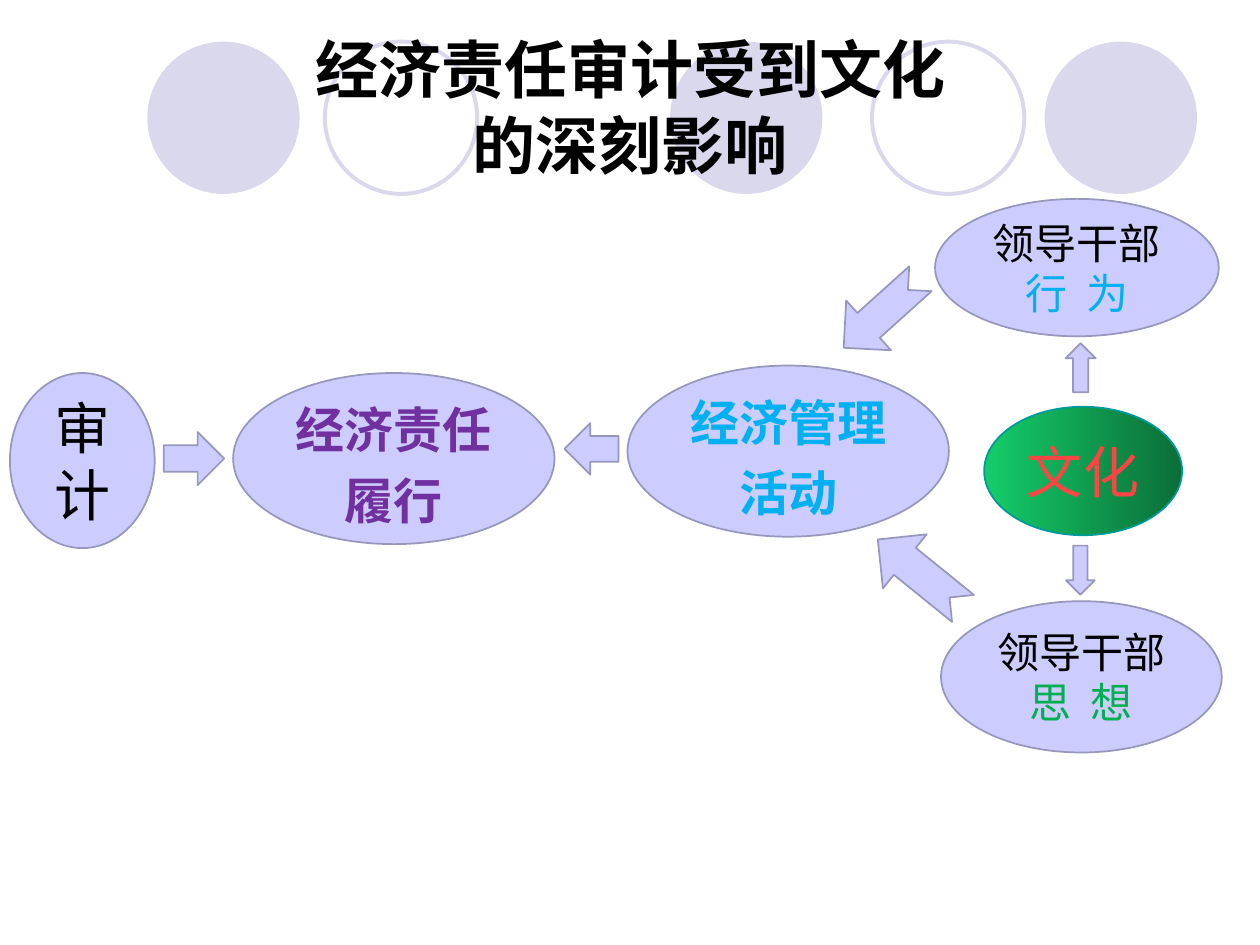
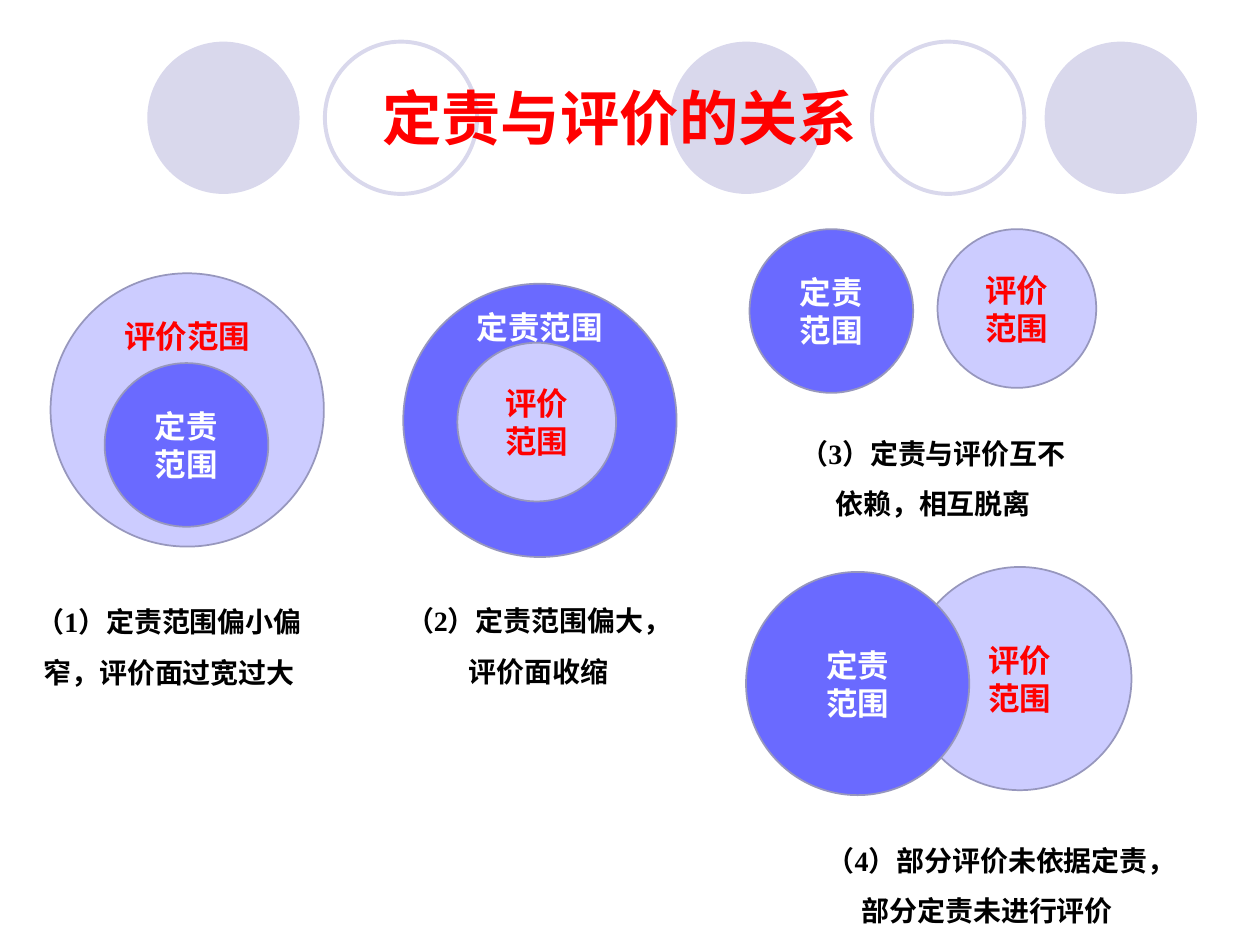
from lxml.etree import SubElement
from pptx import Presentation
from pptx.dml.color import RGBColor
from pptx.enum.shapes import MSO_SHAPE
from pptx.enum.text import MSO_ANCHOR, MSO_AUTO_SIZE, PP_ALIGN
from pptx.oxml.ns import qn
from pptx.util import Cm, Pt

BLACK = RGBColor(0x00, 0x00, 0x00)
WHITE = RGBColor(0xFF, 0xFF, 0xFF)
RED = RGBColor(0xFF, 0x00, 0x00)
CORAL = RGBColor(0xFE, 0x44, 0x44)
SKY = RGBColor(0x00, 0xB0, 0xF0)
GREEN = RGBColor(0x00, 0xB0, 0x50)
PURPLE = RGBColor(0x70, 0x30, 0xA0)
LILAC = RGBColor(0xCC, 0xCC, 0xFF)
INDIGO = RGBColor(0x6A, 0x6A, 0xFF)
OUTLINE = RGBColor(0x97, 0x97, 0xBD)
BAND = RGBColor(0xD9, 0xD8, 0xEC)
TEAL = RGBColor(0x00, 0x99, 0x99)
CULTURE_GRADIENT = (RGBColor(0x14, 0xCD, 0x68), RGBColor(0x0B, 0x6E, 0x38))

CHINESE = "Noto Sans CJK SC"
DIAGRAM = "Noto Sans CJK JP"
SERIF = "Times New Roman"
SANS = "Arial"

# Decorative band: left edge, filled or ring
BAND_TOP, BAND_SIZE = 0.84, 3.07
BAND_CIRCLES = [(2.97, True), (6.55, False), (13.51, True), (17.58, False), (21.06, True)]

# Titles: lines, box, size, font, colour, line spacing
INFLUENCE_TITLE = (["经济责任审计受到文化", "的深刻影响"], (1.4, 1.24, 22.6, 1.8), 36, SERIF, BLACK, 1.0)
RELATION_TITLE = (["定责与评价的关系"], (4.09, 1.12, 16.81, 2.18), 33.9, CHINESE, RED, 1.2)

# Ovals: box, runs of (text, colour), size, bold, line spacing
INFLUENCE_OVALS = [
    ((0.2, 7.52, 2.92, 3.53), [("审计", BLACK)], 32, False, 1.0),
    ((4.7, 7.52, 6.48, 3.45), [("经济责任履行", PURPLE)], 28, True, 1.2),
    ((12.65, 7.37, 6.48, 3.45), [("经济管理活动", SKY)], 28, True, 1.2),
    ((18.85, 4.01, 5.72, 2.77), [("领导干部", BLACK), ("行  为", SKY)], 24, False, 1.0),
    ((18.97, 12.12, 5.66, 3.05), [("领导干部", BLACK), ("思  想", GREEN)], 24, False, 1.0),
]
CULTURE_OVAL = ((19.84, 8.2, 3.99, 2.59), [("文化", CORAL)], 32, False, 1.0)

# Arrows: preset, box, rotation
INFLUENCE_ARROWS = [
    (MSO_SHAPE.NOTCHED_RIGHT_ARROW, (16.74, 5.64, 2.08, 1.35), 138),
    (MSO_SHAPE.NOTCHED_RIGHT_ARROW, (17.45, 10.87, 2.21, 1.4), 219),
    (MSO_SHAPE.UP_ARROW, (21.48, 6.92, 0.61, 0.99), 0),
    (MSO_SHAPE.DOWN_ARROW, (21.49, 11, 0.58, 0.99), 0),
    (MSO_SHAPE.LEFT_ARROW, (11.38, 8.53, 1.09, 1.04), 0),
    (MSO_SHAPE.RIGHT_ARROW, (3.3, 8.71, 1.22, 1.07), 0),
]

# Scope name: first half of the label, fill, text colour
SCOPES = {"duty": ("定责", INDIGO, WHITE), "review": ("评价", LILAC, RED)}

# Scope circles: scope, left, top, diameter, lift of a one-line label (None: two lines)
SCOPE_CIRCLES = [
    ("review", 1.02, 5.51, 5.51, 1.49),
    ("duty", 2.11, 7.32, 3.3, None),
    ("duty", 8.13, 5.72, 5.51, 1.88),
    ("review", 9.22, 6.91, 3.2, None),
    ("duty", 15.11, 4.62, 3.3, None),
    ("review", 18.9, 4.62, 3.2, None),
    ("review", 18.31, 11.43, 4.5, None),
    ("duty", 15.04, 11.53, 4.5, None),
]

CAPTION_HEIGHT = 2.31
CAPTIONS = [
    ("（1）定责范围偏小偏窄，评价面过宽过大", 0.3, 11.73, 6.22),
    ("（2）定责范围偏大，评价面收缩", 7.75, 11.71, 6.22),
    ("（3）定责与评价互不依赖，相互脱离", 15.7, 8.33, 6.22),
    ("（4）部分评价未依据定责，部分定责未进行评价", 16.31, 16.54, 7.19),
]


def add_run(paragraph, text, size, font, color, bold):
    run = paragraph.add_run()
    run.text = text
    run.font.size = Pt(size)
    run.font.bold = bold
    run.font.color.rgb = color
    run.font.name = font
    east_asian = DIAGRAM if font == DIAGRAM else CHINESE
    SubElement(run._r.get_or_add_rPr(), qn("a:ea")).set("typeface", east_asian)


def center(paragraph, line_spacing=1.0):
    paragraph.alignment = PP_ALIGN.CENTER
    paragraph.line_spacing = line_spacing


def add_preset(slide, preset, box, fill=LILAC, line=OUTLINE, line_width=1):
    shape = slide.shapes.add_shape(preset, *map(Cm, box))
    shape.shadow.inherit = False
    if fill is None:
        shape.fill.background()
    else:
        shape.fill.solid()
        shape.fill.fore_color.rgb = fill
    shape.line.color.rgb = line
    shape.line.width = Pt(line_width)
    shape.text_frame.word_wrap = True
    shape.text_frame.vertical_anchor = MSO_ANCHOR.MIDDLE
    return shape


def move_band_to_layout(slide):
    """Draw the circle band and place it behind the layout's placeholders."""
    layout_tree = slide.slide_layout.shapes.element
    for left, filled in BAND_CIRCLES:
        box = (left, BAND_TOP, BAND_SIZE, BAND_SIZE)
        circle = add_preset(slide, MSO_SHAPE.OVAL, box, BAND if filled else None, BAND, 2.25)
        if filled:
            circle.line.fill.background()
        layout_tree.insert(2, circle.element)


def set_title(slide, lines, box, size, font, color, line_spacing):
    title = slide.shapes.title
    title.left, title.top, title.width, title.height = map(Cm, box)
    frame = title.text_frame
    frame.auto_size = MSO_AUTO_SIZE.NONE
    frame.vertical_anchor = MSO_ANCHOR.MIDDLE
    paragraph = frame.paragraphs[0]
    center(paragraph, line_spacing)
    for index, line in enumerate(lines):
        if index:
            paragraph.add_line_break()
        add_run(paragraph, line, size, font, color, True)


def add_text_oval(slide, box, runs, size, bold, line_spacing):
    oval = add_preset(slide, MSO_SHAPE.OVAL, box)
    paragraph = oval.text_frame.paragraphs[0]
    center(paragraph, line_spacing)
    for text, color in runs:
        add_run(paragraph, text, size, DIAGRAM, color, bold)
    return oval


def add_scope_circle(slide, scope, left, top, diameter, lift):
    name, fill, color = SCOPES[scope]
    circle = add_preset(slide, MSO_SHAPE.OVAL, (left, top, diameter, diameter), fill)
    frame = circle.text_frame
    lines = [name, "范围"]
    if lift is not None:
        lines = ["".join(lines)]
        frame.margin_top = 0
        frame.margin_bottom = Cm(2 * lift)
    for index, line in enumerate(lines):
        paragraph = frame.add_paragraph() if index else frame.paragraphs[0]
        center(paragraph)
        add_run(paragraph, line, 18, SANS, color, True)


def add_caption(slide, text, left, top, width):
    box = slide.shapes.add_textbox(Cm(left), Cm(top), Cm(width), Cm(CAPTION_HEIGHT))
    box.text_frame.word_wrap = True
    paragraph = box.text_frame.paragraphs[0]
    center(paragraph, 1.5)
    add_run(paragraph, text, 16, SERIF, BLACK, True)


def build_influence_slide(slide):
    set_title(slide, *INFLUENCE_TITLE)
    for oval in INFLUENCE_OVALS:
        add_text_oval(slide, *oval)
    culture = add_text_oval(slide, *CULTURE_OVAL)
    culture.line.color.rgb = TEAL
    culture.fill.gradient()
    culture.fill.gradient_angle = 0
    for stop, color in zip(culture.fill.gradient_stops, CULTURE_GRADIENT):
        stop.color.rgb = color
    for preset, box, rotation in INFLUENCE_ARROWS:
        add_preset(slide, preset, box).rotation = rotation


def build_relation_slide(slide):
    set_title(slide, *RELATION_TITLE)
    for circle in SCOPE_CIRCLES:
        add_scope_circle(slide, *circle)
    for caption in CAPTIONS:
        add_caption(slide, *caption)


def main():
    presentation = Presentation()
    presentation.slide_width, presentation.slide_height = Cm(25.4), Cm(19.05)
    title_only = presentation.slide_layouts[5]
    influence = presentation.slides.add_slide(title_only)
    relation = presentation.slides.add_slide(title_only)
    move_band_to_layout(influence)
    build_influence_slide(influence)
    build_relation_slide(relation)
    presentation.save("out.pptx")


if __name__ == "__main__":
    main()
